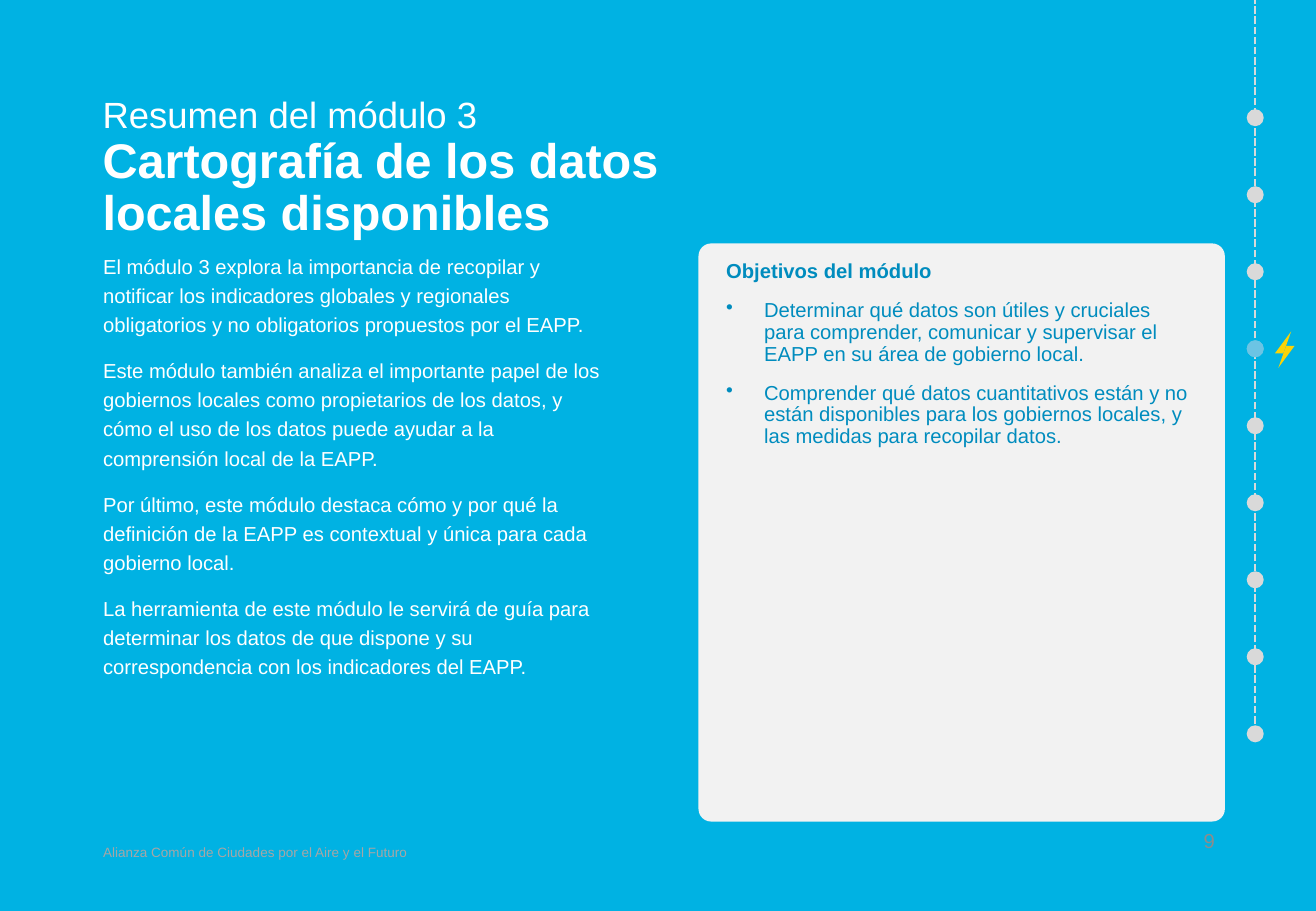
import pptx
import pptx.dml.color
import pptx.enum.dml
import pptx.enum.shapes
import pptx.enum.text
import pptx.oxml
import pptx.oxml.ns
import pptx.util

Pt = pptx.util.Pt
ANCHOR = pptx.enum.text.MSO_ANCHOR
ALIGN = pptx.enum.text.PP_ALIGN
SHAPE = pptx.enum.shapes.MSO_SHAPE

SUMMARY = [
    "El módulo 3 explora la importancia de recopilar y notificar los indicadores globales y "
    "regionales obligatorios y no obligatorios propuestos por el EAPP.",
    "Este módulo también analiza el importante papel de los gobiernos locales como propietarios "
    "de los datos, y cómo el uso de los datos puede ayudar a la comprensión local de la EAPP.",
    "Por último, este módulo destaca cómo y por qué la definición de la EAPP es contextual y "
    "única para cada gobierno local.",
    "La herramienta de este módulo le servirá de guía para determinar los datos de que dispone "
    "y su correspondencia con los indicadores del EAPP.",
]
OBJECTIVES = [
    "Determinar qué datos son útiles y cruciales para comprender, comunicar y supervisar el EAPP "
    "en su área de gobierno local.",
    "Comprender qué datos cuantitativos están y no están disponibles para los gobiernos locales, "
    "y las medidas para recopilar datos.",
]

COLUMN_TOP, COLUMN_WIDTH, COLUMN_HEIGHT = 144.3, 312, 342.7
TRACK_X, TRACK_END = 744, 434.9
DOT_SIZE, DOT_COUNT, DOT_PITCH = 10.1, 9, 45.65
FIRST_DOT_Y, CURRENT_DOT = 69.8, 3
BOLT_CENTER = (761.5, 207.2)
BOLT_HALF = [(-0.9, 2.2), (-5.8, 2.2), (3.8, -10.8), (0, 0)]


def color(value):
    return pptx.dml.color.RGBColor.from_string(value)


def paint(shape, fill):
    shape.shadow.inherit = False
    shape.fill.solid()
    shape.fill.fore_color.rgb = color(fill)
    shape.line.fill.background()


def set_frame(shape, anchor=ANCHOR.TOP, side=7.2, top=3.6):
    frame = shape.text_frame
    frame.word_wrap = True
    frame.auto_size = pptx.enum.text.MSO_AUTO_SIZE.NONE
    frame.vertical_anchor = anchor
    frame.margin_left = frame.margin_right = Pt(side)
    frame.margin_top = frame.margin_bottom = Pt(top)
    return frame


def add_run(paragraph, text, size, fill, bold=False):
    run = paragraph.add_run()
    run.text = text
    run.font.name = "Arial"
    run.font.size = Pt(size)
    run.font.bold = bold
    run.font.color.rgb = color(fill)


def add_bullet(paragraph, indent=22.5):
    properties = paragraph._p.get_or_add_pPr()
    properties.set("marL", str(Pt(indent)))
    properties.set("indent", str(-Pt(indent)))
    bullet = pptx.oxml.parse_xml(
        f'<a:buChar {pptx.oxml.ns.nsdecls("a")} char="•"/>')
    properties.append(bullet)


def add_paragraphs(frame, texts, fill, spacing, heading=None):
    lines = [heading] + texts if heading else texts
    for index, text in enumerate(lines):
        paragraph = frame.add_paragraph() if index else frame.paragraphs[0]
        paragraph.alignment = ALIGN.LEFT
        paragraph.line_spacing = spacing
        paragraph.space_before = Pt(10)
        if heading and index:
            add_bullet(paragraph)
        add_run(paragraph, text, 12, fill, bold=text == heading)


def add_text_box(slide, left, top, width, height, **frame_options):
    box = slide.shapes.add_textbox(Pt(left), Pt(top), Pt(width), Pt(height))
    return set_frame(box, **frame_options)


def add_title(slide):
    title = slide.shapes.title
    title.left, title.top = Pt(53.6), Pt(54)
    title.width, title.height = Pt(450), Pt(77.8)
    frame = set_frame(title)
    frame.margin_right = Pt(60)
    paragraph = frame.paragraphs[0]
    paragraph.alignment = ALIGN.LEFT
    paragraph.line_spacing = 0.9
    add_run(paragraph, "Resumen del módulo 3", 21.6, "FFFFFF")
    paragraph.add_line_break()
    add_run(paragraph, "Cartografía de los datos locales disponibles", 28.8, "FFFFFF", bold=True)


def add_objectives(slide):
    panel = slide.shapes.add_shape(
        SHAPE.ROUNDED_RECTANGLE, Pt(414), Pt(COLUMN_TOP), Pt(COLUMN_WIDTH), Pt(COLUMN_HEIGHT))
    panel.adjustments[0] = 0.024
    paint(panel, "F2F2F2")
    frame = set_frame(panel, side=14.2, top=8.5)
    add_paragraphs(frame, OBJECTIVES, "008CBE", 0.9, heading="Objetivos del módulo")


def add_label(slide, text, size, fill, alignment, left, width, anchor):
    frame = add_text_box(slide, left, 487.4, width, 35, anchor=anchor)
    frame.paragraphs[0].alignment = alignment
    add_run(frame.paragraphs[0], text, size, fill)


def add_dot(slide, index, fill):
    center_y = FIRST_DOT_Y + index * DOT_PITCH
    dot = slide.shapes.add_shape(
        SHAPE.OVAL, Pt(TRACK_X - DOT_SIZE / 2), Pt(center_y - DOT_SIZE / 2),
        Pt(DOT_SIZE), Pt(DOT_SIZE))
    paint(dot, fill)
    return dot


def add_track(slide):
    track = slide.shapes.add_connector(
        pptx.enum.shapes.MSO_CONNECTOR.STRAIGHT, Pt(TRACK_X), Pt(TRACK_END), Pt(TRACK_X), Pt(0))
    track.line.color.rgb = color("D9D9D9")
    track.line.width = Pt(1.5)
    track.line.dash_style = pptx.enum.dml.MSO_LINE.SQUARE_DOT
    track._element.spPr.append(
        pptx.oxml.parse_xml(f'<a:effectLst {pptx.oxml.ns.nsdecls("a")}/>'))
    for index in range(DOT_COUNT):
        add_dot(slide, index, "D9D9D9")


def add_bolt(slide):
    center_x, center_y = BOLT_CENTER
    for direction in (1, -1):
        points = [(Pt(center_x + direction * x), Pt(center_y + direction * y))
                  for x, y in BOLT_HALF]
        builder = slide.shapes.build_freeform(*points[0])
        builder.add_line_segments(points[1:], close=True)
        paint(builder.convert_to_shape(), "FAD307")


def add_current_dot(slide):
    dot = add_dot(slide, CURRENT_DOT, "00B0F0")
    fill = dot._element.spPr.find(pptx.oxml.ns.qn("a:solidFill"))
    fill[0].append(pptx.oxml.parse_xml(
        f'<a:alpha {pptx.oxml.ns.nsdecls("a")} val="50000"/>'))


def main():
    presentation = pptx.Presentation()
    presentation.slide_width, presentation.slide_height = Pt(780), Pt(540)
    slide = presentation.slides.add_slide(presentation.slide_layouts[5])
    slide.background.fill.solid()
    slide.background.fill.fore_color.rgb = color("00B2E3")

    add_label(slide, "Alianza Común de Ciudades por el Aire y el Futuro", 8, "A6A6A6",
              ALIGN.LEFT, 54, 242, ANCHOR.MIDDLE)
    add_track(slide)
    add_objectives(slide)
    summary = add_text_box(slide, 54, COLUMN_TOP, COLUMN_WIDTH, COLUMN_HEIGHT)
    add_paragraphs(summary, SUMMARY, "FFFFFF", 1.2)
    add_title(slide)
    add_label(slide, "9", 12, "8C8C8C", ALIGN.RIGHT, 689.8, 37.4, ANCHOR.TOP)
    add_bolt(slide)
    add_current_dot(slide)
    presentation.save("out.pptx")


if __name__ == "__main__":
    main()
